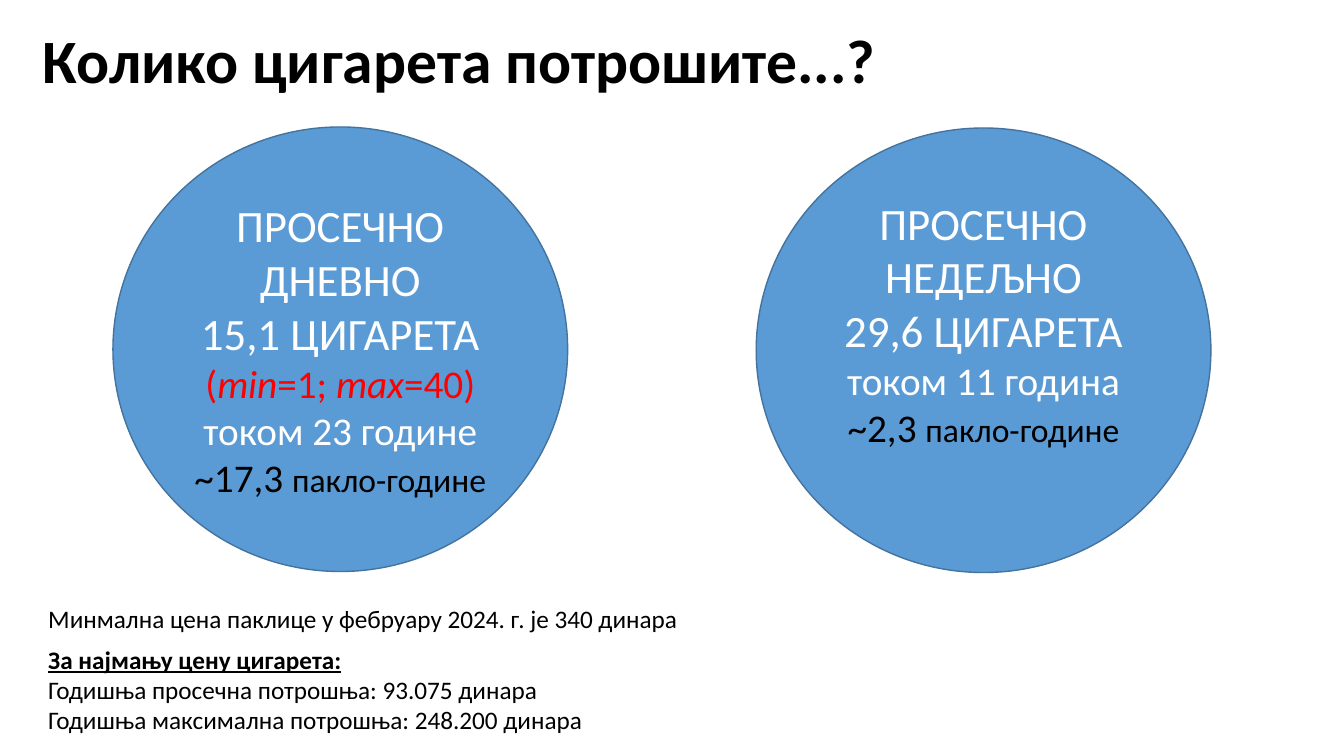
import dataclasses

import pptx
import pptx.dml.color
import pptx.enum.shapes
import pptx.enum.text
import pptx.util

Inches = pptx.util.Inches
FONT = "Calibri"
COLOURS = {
    "black": "000000",
    "white": "FFFFFF",
    "red": "FF0000",
    "circle": "5B9BD5",
    "outline": "43739E",
}


@dataclasses.dataclass
class Span:
    text: str
    size: int = 18
    colour: str = "black"
    bold: bool = False
    italic: bool = False
    underline: bool = False


@dataclasses.dataclass
class Circle:
    left: float
    top: float
    lines: list[list[Span]]
    bottom_inset: float = 0.05


@dataclasses.dataclass
class Note:
    top: float
    width: float
    height: float
    lines: list[list[Span]]


def colour(name: str) -> pptx.dml.color.RGBColor:
    return pptx.dml.color.RGBColor.from_string(COLOURS[name])


def add_span(para, text: str, *, size: int = 18, colour_name: str = "black",
             bold: bool = False, italic: bool = False,
             underline: bool = False) -> None:
    span = para.add_run()
    span.text = text
    font = span.font
    font.name = FONT
    font.size = pptx.util.Pt(size)
    font.color.rgb = colour(colour_name)
    font.bold, font.italic, font.underline = bold, italic, underline


def write_lines(frame, lines: list[list[Span]], align) -> None:
    for index, line in enumerate(lines):
        para = frame.add_paragraph() if index else frame.paragraphs[0]
        para.alignment = align
        for span in line:
            add_span(para, span.text, size=span.size, colour_name=span.colour,
                     bold=span.bold, italic=span.italic,
                     underline=span.underline)


def draw_circle(page, circle: Circle) -> None:
    shape = page.shapes.add_shape(
        pptx.enum.shapes.MSO_SHAPE.OVAL, Inches(circle.left),
        Inches(circle.top), Inches(4.51), Inches(4.41))
    shape.shadow.inherit = False
    shape.fill.solid()
    shape.fill.fore_color.rgb = colour("circle")
    shape.line.color.rgb = colour("outline")
    shape.line.width = pptx.util.Pt(1)
    frame = shape.text_frame
    frame.word_wrap = True
    frame.vertical_anchor = pptx.enum.text.MSO_ANCHOR.MIDDLE
    frame.margin_bottom = Inches(circle.bottom_inset)
    write_lines(frame, circle.lines, pptx.enum.text.PP_ALIGN.CENTER)


def draw_note(page, note: Note) -> None:
    box = page.shapes.add_textbox(Inches(0.38), Inches(note.top),
                                  Inches(note.width), Inches(note.height))
    frame = box.text_frame
    frame.word_wrap = False
    frame.auto_size = pptx.enum.text.MSO_AUTO_SIZE.SHAPE_TO_FIT_TEXT
    write_lines(frame, note.lines, pptx.enum.text.PP_ALIGN.LEFT)


def headline(text: str) -> list[Span]:
    return [Span(text, 32, "white")]


def duration(text: str) -> list[Span]:
    return [Span(text, 28, "white")]


def pack_years(amount: str) -> list[Span]:
    return [Span(f"~{amount} ", 28), Span("пакло-године", 24)]


CIRCLES = [
    Circle(1.12, 1.26, [
        headline("ПРОСЕЧНО ДНЕВНО"),
        headline("15,1 ЦИГАРЕТА"),
        [Span("(", 28, "red"), Span("min", 28, "red", italic=True),
         Span("=1; ", 28, "red"), Span("max", 28, "red", italic=True),
         Span("=40)", 28, "red")],
        duration("током 23 године"),
        pack_years("17,3"),
    ]),
    Circle(7.5, 1.27, [
        headline("ПРОСЕЧНО НЕДЕЉНО"),
        headline("29,6 ЦИГАРЕТА"),
        duration("током 11 година"),
        pack_years("2,3"),
    ], bottom_inset=0.59),
]

NOTES = [
    Note(5.94, 6.51, 0.4, [
        [Span("Mинмална цена паклице у фебруару 2024. г. је 340 динара")],
    ]),
    Note(6.34, 5.61, 1.01, [
        [Span("За најмању цену цигарета:", bold=True, underline=True)],
        [Span("Годишња просечна потрошња: 93.075 динара")],
        [Span("Годишња максимална потрошња: 248.200 динара")],
    ]),
]


def main() -> None:
    deck = pptx.Presentation()
    deck.slide_width, deck.slide_height = Inches(13.33), Inches(7.5)
    page = deck.slides.add_slide(deck.slide_layouts[5])

    # Title
    title = page.shapes.title
    title.left, title.top = Inches(0.32), Inches(0.1)
    title.width, title.height = Inches(11.5), Inches(1.07)
    frame = title.text_frame
    frame.word_wrap = True
    frame.auto_size = pptx.enum.text.MSO_AUTO_SIZE.NONE
    frame.vertical_anchor = pptx.enum.text.MSO_ANCHOR.MIDDLE
    write_lines(frame, [[Span("Колико цигарета потрошите...?", 44, bold=True)]],
                pptx.enum.text.PP_ALIGN.LEFT)
    frame.paragraphs[0].line_spacing = 0.9

    # Daily and weekly consumption
    for circle in CIRCLES:
        draw_circle(page, circle)

    # Cost of smoking
    for note in NOTES:
        draw_note(page, note)

    deck.save("out.pptx")


if __name__ == "__main__":
    main()
